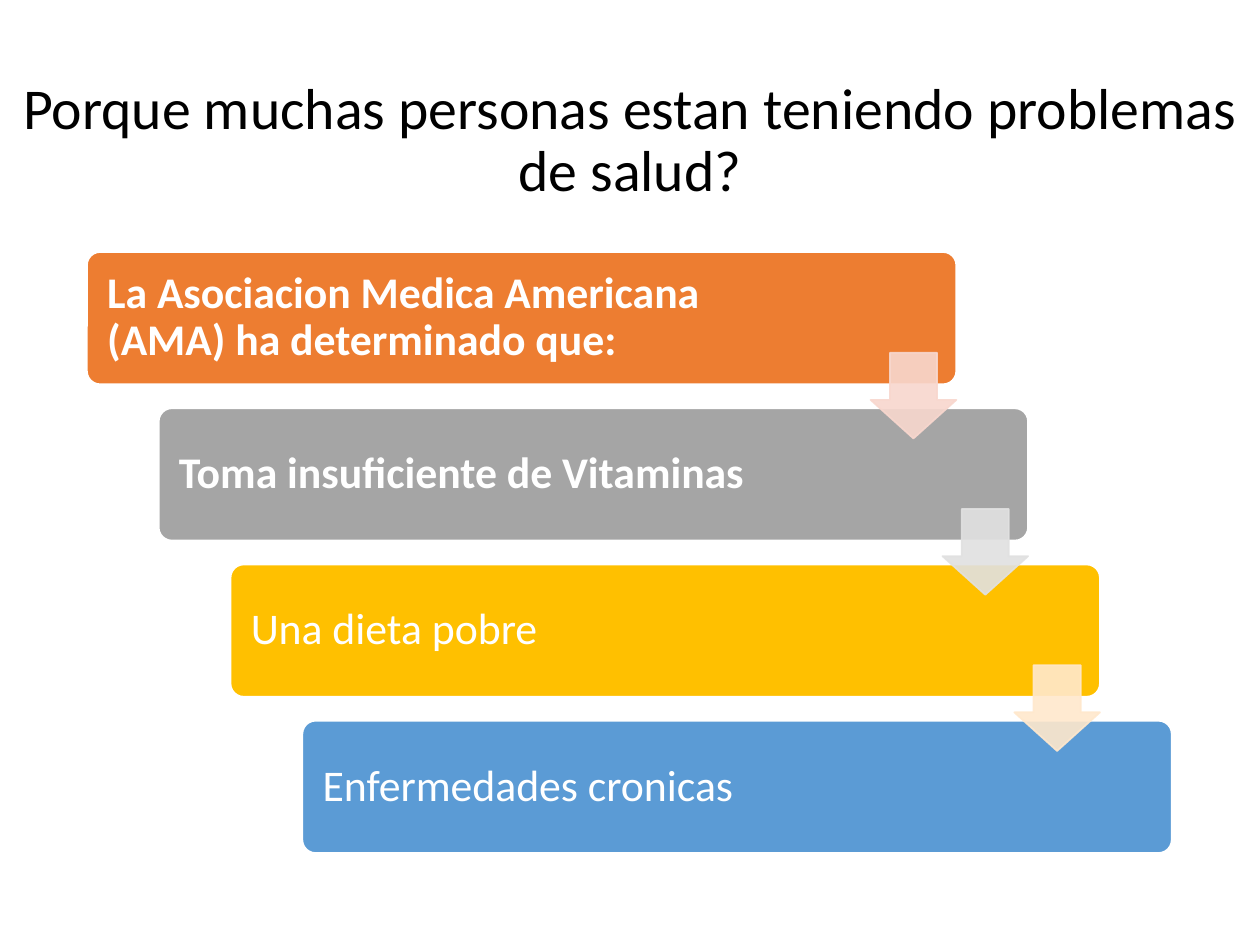
"""Build a slide with a title and a descending staircase of four steps."""
from dataclasses import dataclass
from typing import Optional

from lxml import etree
from pptx import Presentation
from pptx.dml.color import RGBColor
from pptx.enum import shapes, text
from pptx.oxml import ns
from pptx.util import Inches, Pt

FONT = "Calibri"
WHITE = "FFFFFF"
STEP_X, STEP_Y = 0.57, 1.24


@dataclass
class Step:
    label: str
    color: str
    bold: bool = False
    arrow_color: Optional[str] = None


STEPS = [
    Step("La Asociacion Medica Americana (AMA) ha determinado que:", "ED7D31", True, "F8D7CE"),
    Step("Toma insuficiente de Vitaminas", "A5A5A5", True, "E1E1E1"),
    Step("Una dieta pobre", "FFC000", arrow_color="FFE8CC"),
    Step("Enfermedades cronicas", "5B9BD5"),
]


def rgb(color: str) -> RGBColor:
    return RGBColor.from_string(color)


def format_text(frame, label: str, size: float, color: str, align, bold: bool = False) -> None:
    frame.word_wrap = True
    frame.vertical_anchor = text.MSO_ANCHOR.MIDDLE
    para = frame.paragraphs[0]
    para.text = label
    para.alignment = align
    para.line_spacing = 0.9
    para.font.name = FONT
    para.font.size = Pt(size)
    para.font.bold = bold
    para.font.color.rgb = rgb(color)


def add_block(page, kind, box: tuple, adjustments: list, fill: str, line: str):
    block = page.shapes.add_shape(kind, *map(Inches, box))
    block.shadow.inherit = False
    for index, value in enumerate(adjustments):
        block.adjustments[index] = value
    block.fill.solid()
    block.fill.fore_color.rgb = rgb(fill)
    block.line.color.rgb = rgb(line)
    block.line.width = Pt(1)
    return block


def add_bar(page, index: int, step: Step) -> None:
    box = (0.69 + index * STEP_X, 2 + index * STEP_Y, 6.9, 1.05)
    bar = add_block(page, shapes.MSO_SHAPE.ROUNDED_RECTANGLE, box, [0.1], step.color, WHITE)
    frame = bar.text_frame
    frame.margin_left, frame.margin_right = Inches(0.13), Inches(1.29)
    frame.margin_top = frame.margin_bottom = Inches(0.1)
    format_text(frame, step.label, 25, WHITE, text.PP_ALIGN.LEFT, step.bold)


def add_arrow(page, index: int, color: str) -> None:
    box = (6.91 + index * STEP_X, 2.8 + index * STEP_Y, 0.68, 0.68)
    arrow = add_block(page, shapes.MSO_SHAPE.DOWN_ARROW, box, [0.55, 0.45], color, color)
    for paint in arrow._element.spPr.iter(ns.qn("a:srgbClr")):
        etree.SubElement(paint, ns.qn("a:alpha"), val="90000")


def main() -> None:
    deck = Presentation()
    deck.slide_width, deck.slide_height = Inches(10), Inches(7.5)
    page = deck.slides.add_slide(deck.slide_layouts[5])

    title = page.shapes.title
    title.left, title.top = Inches(0), Inches(0.4)
    title.width, title.height = Inches(10), Inches(1.45)
    format_text(title.text_frame, "Porque muchas personas estan teniendo problemas de salud?",
                33, "000000", text.PP_ALIGN.CENTER)

    for index, step in enumerate(STEPS):
        add_bar(page, index, step)
    for index, step in enumerate(STEPS):
        if step.arrow_color:
            add_arrow(page, index, step.arrow_color)

    deck.save("out.pptx")


if __name__ == "__main__":
    main()
